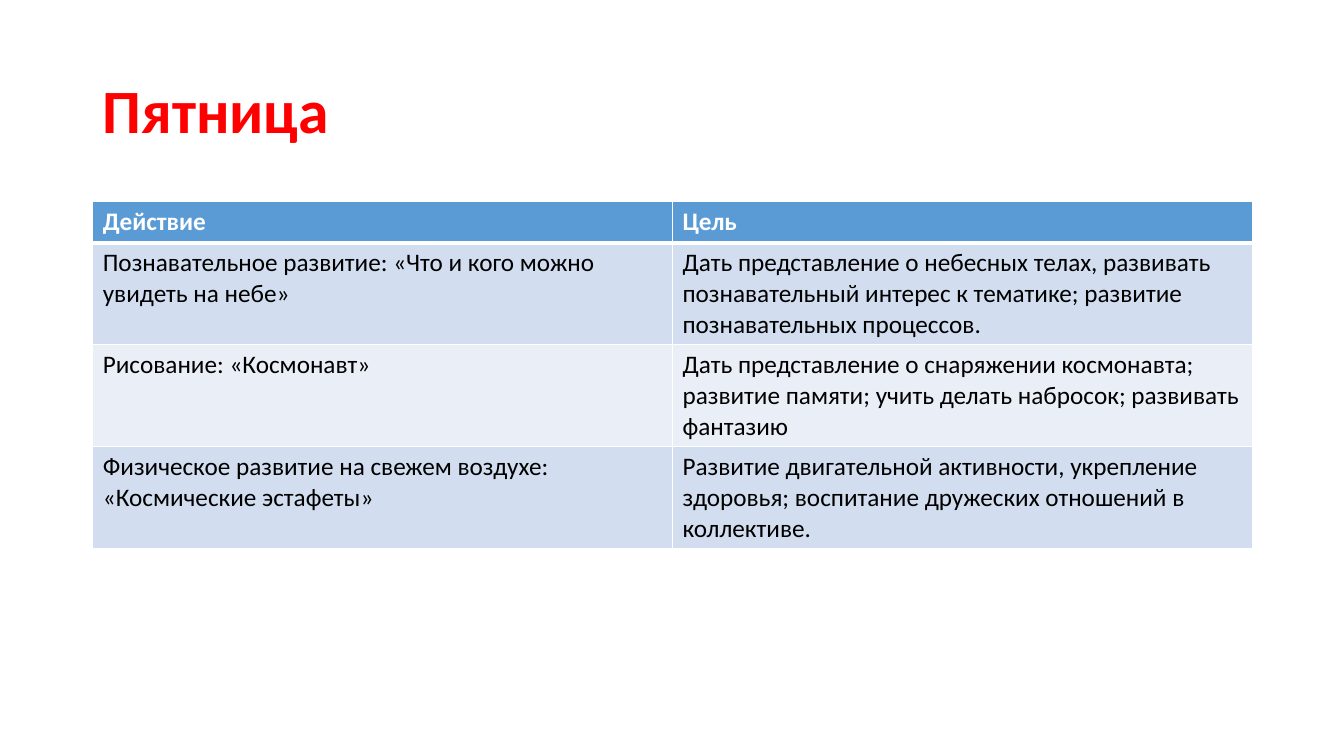
import pptx
import pptx.dml.color
import pptx.enum.text
import pptx.oxml
import pptx.oxml.ns
import pptx.util
from pptx.util import Inches

COLORS = {
    "title": "FF0000",
    "header": "5B9BD5",
    "odd_row": "D2DEEF",
    "even_row": "EAEFF7",
    "white": "FFFFFF",
    "black": "000000",
}
LEFT, WIDTH = 0.92, 11.5
HEADER_HEIGHT, ROW_HEIGHT = 0.41, 1.01

ACTIVITIES = [
    ("Действие", "Цель"),
    ("Познавательное развитие: «Что и кого можно увидеть на небе»",
     "Дать представление о небесных телах, развивать познавательный интерес "
     "к тематике; развитие познавательных процессов."),
    ("Рисование: «Космонавт»",
     "Дать представление о снаряжении космонавта; развитие памяти; "
     "учить делать набросок; развивать фантазию"),
    ("Физическое развитие на свежем воздухе: «Космические эстафеты»",
     "Развитие двигательной активности, укрепление здоровья; "
     "воспитание дружеских отношений в коллективе."),
]


def rgb(name):
    return pptx.dml.color.RGBColor.from_string(COLORS[name])


def write_text(frame, text, size=18, color="black", bold=False, line_spacing=None):
    paragraph = frame.paragraphs[0]
    paragraph.line_spacing = line_spacing
    run = paragraph.add_run()
    run.text = text
    run.font.name = "Calibri"
    run.font.size = pptx.util.Pt(size)
    run.font.bold = bold
    run.font.color.rgb = rgb(color)


def add_title(slide, text):
    title = slide.shapes.add_textbox(
        Inches(LEFT), Inches(0.4), Inches(WIDTH), Inches(1.45))
    title.text_frame.word_wrap = True
    title.text_frame.vertical_anchor = pptx.enum.text.MSO_ANCHOR.MIDDLE
    write_text(title.text_frame, text, size=44, color="title", bold=True,
               line_spacing=0.9)


def set_borders(cell, top=1, bottom=1):
    """Give the cell white borders; must run before its fill is set."""
    properties = cell._tc.get_or_add_tcPr()
    for side, points in (("L", 1), ("R", 1), ("T", top), ("B", bottom)):
        properties.append(pptx.oxml.parse_xml(
            f'<a:ln{side} {pptx.oxml.ns.nsdecls("a")} w="{points * 12700}">'
            f'<a:solidFill><a:srgbClr val="{COLORS["white"]}"/></a:solidFill>'
            f'</a:ln{side}>'))


def add_activity_table(slide, activities):
    row_count, column_count = len(activities), len(activities[0])
    height = HEADER_HEIGHT + ROW_HEIGHT * (row_count - 1)
    table = slide.shapes.add_table(
        row_count, column_count,
        Inches(LEFT), Inches(2), Inches(WIDTH), Inches(height)).table
    for column in table.columns:
        column.width = Inches(WIDTH / column_count)
    for r, activity in enumerate(activities):
        is_header = r == 0
        table.rows[r].height = Inches(HEADER_HEIGHT if is_header else ROW_HEIGHT)
        background = "header" if is_header else "odd_row" if r % 2 else "even_row"
        for c, text in enumerate(activity):
            cell = table.cell(r, c)
            set_borders(cell, top=3 if r == 1 else 1, bottom=3 if is_header else 1)
            cell.fill.solid()
            cell.fill.fore_color.rgb = rgb(background)
            write_text(cell.text_frame, text, bold=is_header,
                       color="white" if is_header else "black")


def main():
    presentation = pptx.Presentation()
    presentation.slide_width = Inches(13.33)
    presentation.slide_height = Inches(7.5)
    slide = presentation.slides.add_slide(presentation.slide_layouts[6])
    add_title(slide, "Пятница")
    add_activity_table(slide, ACTIVITIES)
    presentation.save("out.pptx")


if __name__ == "__main__":
    main()
